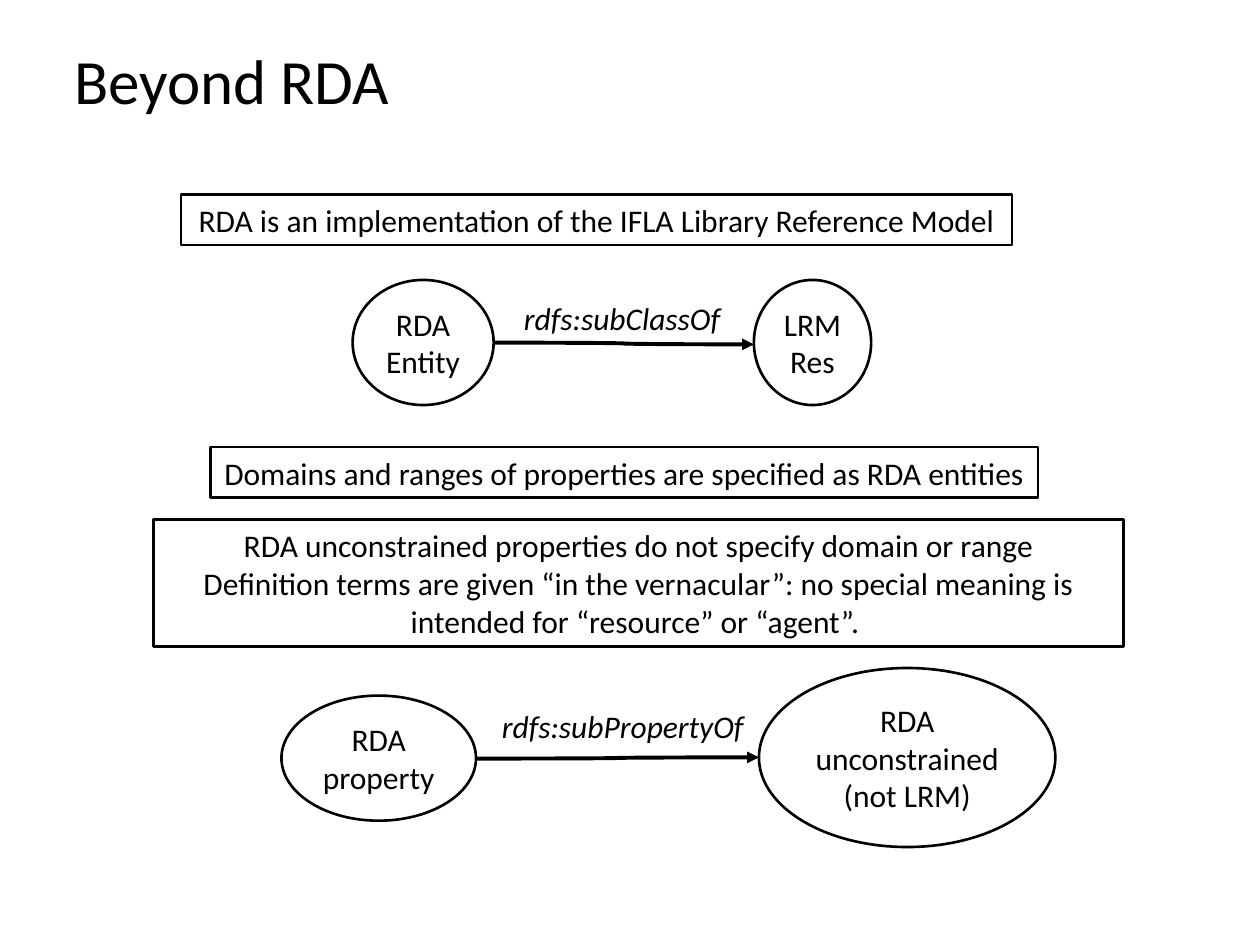
"""Build the Beyond RDA slide."""
import pptx
import pptx.util
import pptx.dml.color
import pptx.enum.shapes
import pptx.enum.text
import pptx.oxml

Pt = pptx.util.Pt
KINDS = pptx.enum.shapes.MSO_SHAPE
ALIGN = pptx.enum.text.PP_ALIGN
COLORS = {"ink": "000000"}
FONT = "Calibri"


def color(name):
    return pptx.dml.color.RGBColor.from_string(COLORS[name])


def write(shape, text, size=18, italic=False, align=ALIGN.CENTER, wrap=False,
          anchor=pptx.enum.text.MSO_ANCHOR.MIDDLE):
    frame = shape.text_frame
    frame.word_wrap = wrap
    frame.vertical_anchor = anchor
    frame.text = text
    for para in frame.paragraphs:
        para.alignment = align
        font = para.runs[0].font
        font.name, font.size, font.italic = FONT, Pt(size), italic
        font.color.rgb = color("ink")


def label(slide, box, text, **style):
    shape = slide.shapes.add_textbox(*map(Pt, box))
    write(shape, text, align=ALIGN.LEFT,
          anchor=pptx.enum.text.MSO_ANCHOR.TOP, **style)


def outline(slide, kind, box, text, **style):
    shape = slide.shapes.add_shape(kind, *map(Pt, box))
    shape.shadow.inherit = False
    shape.fill.background()
    shape.line.color.rgb = color("ink")
    shape.line.width = Pt(1.5)
    write(shape, text, **style)


def arrow(slide, *ends):
    curve = pptx.enum.shapes.MSO_CONNECTOR.CURVE
    link = slide.shapes.add_connector(curve, *map(Pt, ends))
    link.line.color.rgb = color("ink")
    link.line.width = Pt(2.25)
    head = pptx.oxml.parse_xml(
        '<a:tailEnd xmlns:a="http://schemas.openxmlformats.org/'
        'drawingml/2006/main" type="triangle"/>')
    link.line._get_or_add_ln().append(head)
    props = link._element.spPr
    props.append(props.makeelement(pptx.oxml.ns.qn("a:effectLst"), {}))


def main():
    deck = pptx.Presentation()
    deck.slide_width, deck.slide_height = Pt(720), Pt(540)
    slide = deck.slides.add_slide(deck.slide_layouts[6])

    label(slide, (35.4, 20.2, 196.6, 51), "Beyond RDA", size=36)

    for box, text, wrap in [
        ((103.4, 111, 475, 29),
         "RDA is an implementation of the IFLA Library Reference Model", False),
        ((120.2, 255.5, 473, 29),
         "Domains and ranges of properties are specified as RDA entities", False),
        ((87.7, 296.8, 554.5, 72.7),
         "RDA unconstrained properties do not specify domain or range\n"
         "Definition terms are given “in the vernacular”: no special meaning "
         "is intended for “resource” or “agent”. ", True),
    ]:
        outline(slide, KINDS.RECTANGLE, box, text, wrap=wrap)

    for box, text in [
        ((201.5, 160, 80.6, 71.5), "RDA\nEntity"),
        ((430.8, 160, 67, 71.5), "LRM\nRes"),
        ((160.8, 397.5, 111.2, 71.5), "RDA\nproperty"),
        ((433.7, 381.7, 169.4, 102.3), "RDA\nunconstrained\n(not LRM)"),
    ]:
        outline(slide, KINDS.OVAL, box, text)

    arrow(slide, 282.1, 195.8, 430.8, 196.8)
    arrow(slide, 272, 433.5, 433.7, 432.8)
    label(slide, (292.3, 167.3, 128, 29), "rdfs:subClassOf", italic=True)
    label(slide, (279.7, 400.5, 154, 29), "rdfs:subPropertyOf", italic=True)

    deck.save("out.pptx")


if __name__ == "__main__":
    main()
